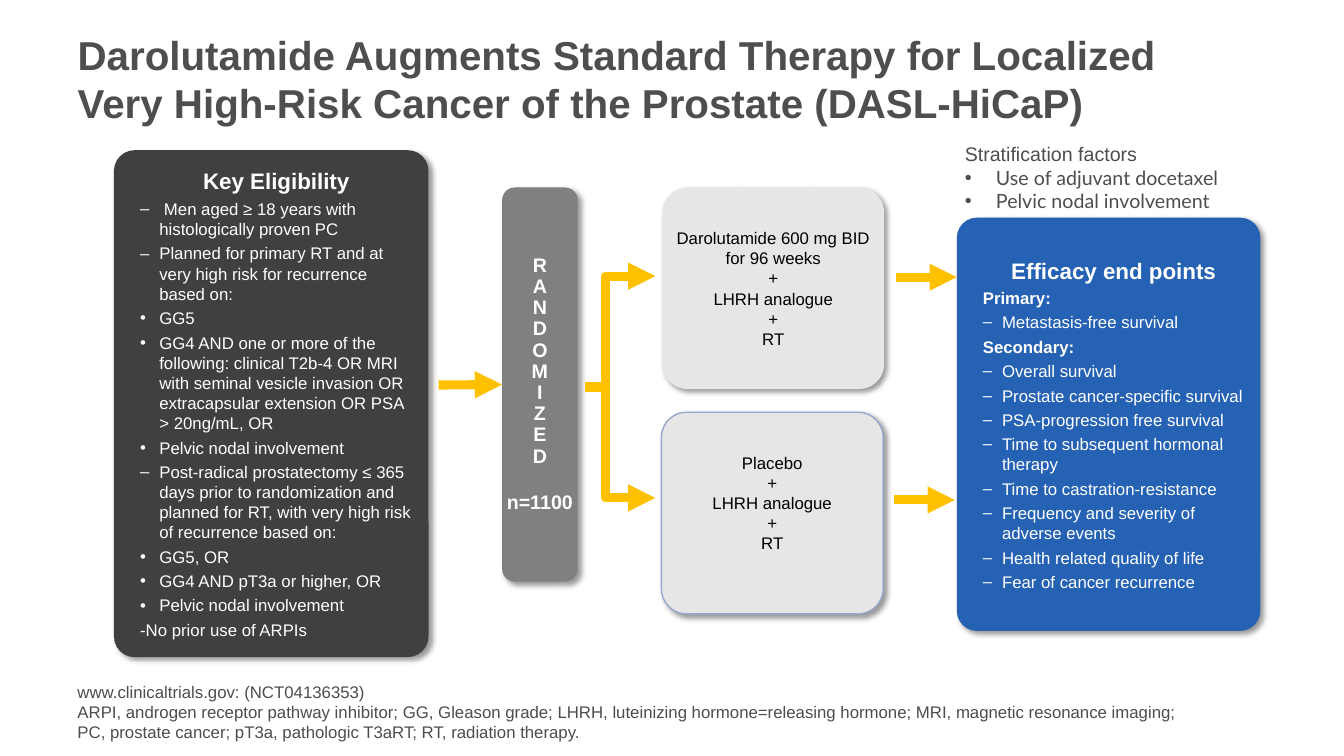
from lxml.etree import SubElement
from pptx import Presentation
from pptx.dml.color import RGBColor
from pptx.enum.shapes import MSO_CONNECTOR, MSO_SHAPE
from pptx.enum.text import MSO_ANCHOR, PP_ALIGN
from pptx.oxml.ns import qn
from pptx.util import Inches, Pt

TITLE_GREY = RGBColor(0x4D, 0x4E, 0x4D)
TEXT_GREY = RGBColor(0x4D, 0x4D, 0x4D)
CHARCOAL = RGBColor(0x40, 0x40, 0x40)
MID_GREY = RGBColor(0x80, 0x80, 0x80)
LIGHT_GREY = RGBColor(0xE6, 0xE6, 0xE6)
BLUE = RGBColor(0x26, 0x62, 0xB4)
OUTLINE_BLUE = RGBColor(0x95, 0xA9, 0xCC)
AMBER = RGBColor(0xFF, 0xC0, 0x00)
WHITE = RGBColor(0xFF, 0xFF, 0xFF)
BLACK = RGBColor(0, 0, 0)

CENTER = {"alignment": PP_ALIGN.CENTER}
LEFT = {"alignment": PP_ALIGN.LEFT}
SPACED = {**LEFT, "space_before": Pt(3)}
HEADING = {"size": Pt(16), "bold": True}
PANEL_INSETS = (0.2, 0.05, 0.1, 0.05)

ELIGIBILITY = [
    ("–", " Men aged ≥ 18 years with histologically proven PC"),
    ("–", "Planned for primary RT and at very high risk for recurrence based on:"),
    ("•", "GG5"),
    ("•", "GG4 AND one or more of the following: clinical T2b-4 OR MRI with seminal "
          "vesicle invasion OR extracapsular extension OR PSA > 20ng/mL, OR"),
    ("•", "Pelvic nodal involvement"),
    ("–", "Post-radical prostatectomy ≤ 365 days prior to randomization and planned "
          "for RT, with very high risk of recurrence based on:"),
    ("•", "GG5, OR"),
    ("•", "GG4 AND pT3a or higher, OR"),
    ("•", "Pelvic nodal involvement"),
    ("", "-No prior use of ARPIs"),
]
SECONDARY = [
    "Overall survival",
    "Prostate cancer-specific survival",
    "PSA-progression free survival",
    "Time to subsequent hormonal therapy",
    "Time to castration-resistance",
    "Frequency and severity of adverse events",
    "Health related quality of life",
    "Fear of cancer recurrence",
]
FOOTNOTE = (
    "www.clinicaltrials.gov: (NCT04136353)\v"
    "ARPI, androgen receptor pathway inhibitor; GG, Gleason grade; LHRH, luteinizing "
    "hormone=releasing hormone; MRI, magnetic resonance imaging; PC, prostate cancer; "
    "pT3a, pathologic T3aRT; RT, radiation therapy."
)


def apply(target, values):
    for name, value in values.items():
        setattr(target, name, value)


class TrialSlide:
    font = "Arial"
    size = Pt(12)
    arrow_width = Pt(6.5)

    def __init__(self, slide):
        self.slide = slide

    def frame(self, frame, insets, anchor):
        sides = ("margin_left", "margin_top", "margin_right", "margin_bottom")
        apply(frame, dict(zip(sides, map(Inches, insets))))
        apply(frame, {"word_wrap": True, "vertical_anchor": anchor})

    def add_rows(self, frame, rows, color):
        """Fill a frame from (text, paragraph format, font format, bullet, indent) rows."""
        for index, (text, layout, font, bullet, indent) in enumerate(rows):
            paragraph = frame.paragraphs[0] if index == 0 else frame.add_paragraph()
            paragraph.text = text
            if bullet:
                self.bullet(paragraph, bullet, indent, color)
            apply(paragraph, layout)
            apply(paragraph.font, {"name": self.font, "size": self.size, "bold": False, **font})
            paragraph.font.color.rgb = color

    def bullet(self, paragraph, mark, indent, color):
        properties = paragraph._p.get_or_add_pPr()
        properties.set("marL", str(Inches(indent)))
        properties.set("indent", str(-Inches(indent)))
        tint = SubElement(properties, qn("a:buClr"))
        SubElement(tint, qn("a:srgbClr"), val=str(color))
        SubElement(properties, qn("a:buFont"), typeface=self.font)
        SubElement(properties, qn("a:buChar"), char=mark)

    def title(self, text, box):
        title = self.slide.shapes.title
        apply(title, dict(zip(("left", "top", "width", "height"), map(Inches, box))))
        self.frame(title.text_frame, (0.1, 0.05, 0.1, 0.05), MSO_ANCHOR.MIDDLE)
        font = {"size": Pt(28.8), "bold": True}
        self.add_rows(title.text_frame, [(text, LEFT, font, "", 0)], TITLE_GREY)

    def note(self, box, rows):
        note = self.slide.shapes.add_textbox(*map(Inches, box))
        self.frame(note.text_frame, (0.1, 0.05, 0.1, 0.05), MSO_ANCHOR.TOP)
        self.add_rows(note.text_frame, rows, TEXT_GREY)

    def card(self, box, rounding, fill, color, insets, rows, outline=None):
        card = self.slide.shapes.add_shape(MSO_SHAPE.ROUNDED_RECTANGLE, *map(Inches, box))
        card.adjustments[0] = rounding
        card.fill.solid()
        card.fill.fore_color.rgb = fill
        if outline:
            card.line.color.rgb = outline
            card.line.width = Pt(1)
        else:
            card.line.fill.background()
        self.shadow(card)
        self.frame(card.text_frame, insets, MSO_ANCHOR.MIDDLE)
        self.add_rows(card.text_frame, rows, color)
        return card

    def shadow(self, card):
        card.shadow.inherit = False
        effects = card.element.spPr.find(qn("a:effectLst"))
        outer = SubElement(effects, qn("a:outerShdw"), blurRad=str(Pt(4)), dist=str(Pt(3)),
                           dir="2700000", algn="tl", rotWithShape="0")
        tint = SubElement(outer, qn("a:srgbClr"), val=str(BLACK))
        SubElement(tint, qn("a:alpha"), val="40000")

    def arrow(self, start, end, bend=None):
        """Draw an arrow; bend is the share of its width at which an elbow turns."""
        kind = MSO_CONNECTOR.ELBOW if bend else MSO_CONNECTOR.STRAIGHT
        arrow = self.slide.shapes.add_connector(kind, *map(Inches, start + end))
        arrow.line.color.rgb = AMBER
        arrow.line.width = self.arrow_width
        properties = arrow.element.spPr
        SubElement(properties.find(qn("a:ln")), qn("a:tailEnd"), type="triangle")
        SubElement(properties, qn("a:effectLst"))
        if bend:
            guides = properties.find(qn("a:prstGeom")).get_or_add_avLst()
            SubElement(guides, qn("a:gd"), name="adj1", fmla=f"val {round(bend * 100000)}")
        return arrow


def main():
    deck = Presentation()
    deck.slide_width, deck.slide_height = Inches(13.33), Inches(7.5)
    trial = TrialSlide(deck.slides.add_slide(deck.slide_layouts[5]))

    trial.title("Darolutamide Augments Standard Therapy for Localized "
                "Very High-Risk Cancer of the Prostate (DASL-HiCaP)", (0.67, 0.13, 11.75, 1.3))

    criteria = [(text, SPACED, {}, mark, 0.19) for mark, text in ELIGIBILITY]
    trial.card((1.13, 1.49, 3.12, 5.03), 0.066, CHARCOAL, WHITE, PANEL_INSETS,
               [("Key Eligibility", CENTER, HEADING, "", 0), *criteria])

    end_points = [
        ("Efficacy end points", CENTER, HEADING, "", 0),
        ("Primary:", SPACED, {"bold": True}, "", 0),
        ("Metastasis-free survival", SPACED, {}, "–", 0.19),
        ("Secondary:", SPACED, {"bold": True}, "", 0),
        *((text, SPACED, {}, "–", 0.19) for text in SECONDARY),
    ]
    trial.card((9.49, 2.16, 3.01, 4.1), 0.066, BLUE, WHITE, PANEL_INSETS, end_points)

    arms = [
        ("Darolutamide 600 mg BID for 96 weeks", (6.57, 1.86), 0.05, None),
        ("Placebo", (6.56, 4.09), 0.25, OUTLINE_BLUE),
    ]
    for drug, corner, bottom_inset, outline in arms:
        regimen = [(text, CENTER, {}, "", 0)
                   for text in (drug + "\v+", "LHRH analogue", "+", "RT")]
        trial.card(corner + (2.2, 2), 0.125, LIGHT_GREY, BLACK,
                   (0, 0.05, 0, bottom_inset), regimen, outline)

    bar_font = {"size": Pt(14), "bold": True}
    bar_layout = {**CENTER, "line_spacing": 0.9}
    randomized = trial.card(
        (4.98, 1.86, 0.75, 3.91), 0.167, MID_GREY, WHITE, (0.09, 0.04, 0.09, 0.04),
        [("\v".join("RANDOMIZED"), bar_layout, bar_font, "", 0),
         ("n=1100", {**bar_layout, "space_before": Pt(18)}, bar_font, "", 0)])
    randomized.text_frame.word_wrap = False

    trial.arrow((4.35, 3.82), (4.95, 3.82)).end_connect(randomized, 1)
    for arm_y in (4.94, 2.74):
        trial.arrow((5.8, 3.84), (6.5, arm_y), bend=0.293)
    for start in ((8.89, 2.75), (8.87, 4.96)):
        trial.arrow(start, (start[0] + 0.6, start[1]))

    factor_font = {"name": "Lato", "size": Pt(14)}
    trial.note((9.47, 1.36, 3.22, 1.11), [
        ("Stratification factors", LEFT, {"size": Pt(14)}, "", 0),
        ("Use of adjuvant docetaxel", LEFT, factor_font, "•", 0.31),
        ("Pelvic nodal involvement", LEFT, factor_font, "•", 0.31),
    ])
    trial.note((0.67, 6.71, 11.24, 0.48), [(FOOTNOTE, LEFT, {}, "", 0)])
    deck.save("out.pptx")


if __name__ == "__main__":
    main()
